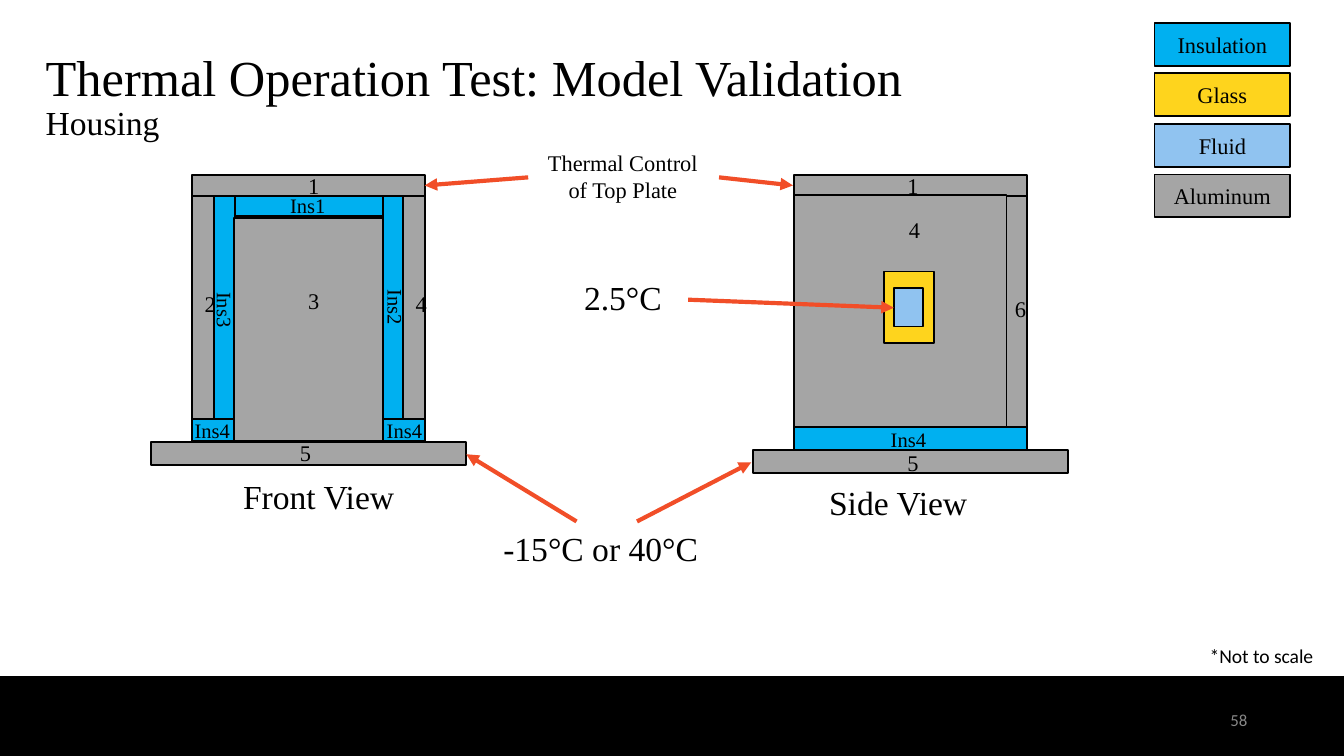
from dataclasses import dataclass

from lxml import etree
from pptx import Presentation
from pptx import util as u
from pptx.dml.color import RGBColor
from pptx.enum import shapes, text
from pptx.oxml import ns


@dataclass(frozen=True)
class Theme:
    ink: str = "000000"
    muted: str = "888888"
    arrow: str = "F14E28"
    insulation: str = "00B0F0"
    glass: str = "FED41D"
    fluid: str = "90C3F0"
    aluminum: str = "A5A5A5"
    serif: str = "Times New Roman"
    sans: str = "Calibri"
    title: float = 27
    large: float = 18
    label: float = 12
    small: float = 11
    note: float = 10.5
    number: float = 9
    outline: float = 1
    arrow_width: float = 2.25


LEFT, CENTER, RIGHT = text.PP_ALIGN.LEFT, text.PP_ALIGN.CENTER, text.PP_ALIGN.RIGHT
MIDDLE, TOP = text.MSO_ANCHOR.MIDDLE, text.MSO_ANCHOR.TOP
COLUMNS, ROWS = 100, 56.25


class Sheet:
    """Draws on one slide; every length is counted in square grid cells."""

    def __init__(self, deck, theme):
        self.theme = theme
        self.cell = deck.slide_width / COLUMNS
        self.slide = deck.slides.add_slide(deck.slide_layouts[5])

    def grid(self, *cells):
        return [u.Emu(round(count * self.cell)) for count in cells]

    def style(self, para, size, font, color, align):
        para.alignment = align
        for span in para.runs:
            span.font.size = u.Pt(size)
            span.font.name = font
            span.font.color.rgb = RGBColor.from_string(color)

    def frame(self, box, margin, anchor):
        frame = box.text_frame
        frame.word_wrap = True
        frame.auto_size = text.MSO_AUTO_SIZE.NONE
        frame.vertical_anchor = anchor
        frame.margin_left = frame.margin_right = u.Inches(0.1)
        frame.margin_top = frame.margin_bottom = u.Inches(margin)
        return frame

    def title(self, heading, subheading, place):
        box = self.slide.shapes.title
        box.left, box.top, box.width, box.height = self.grid(*place)
        para = self.frame(box, 0.1, TOP).paragraphs[0]
        para.text = f"{heading}\v{subheading}"
        para.line_spacing = 0.9
        self.style(para, self.theme.title, self.theme.serif, self.theme.ink, LEFT)
        para.runs[1].font.size = u.Pt(self.theme.large)
        line_break = para._p.find(ns.qn("a:br"))
        etree.SubElement(line_break, ns.qn("a:rPr"), sz=str(self.theme.title * 100))

    def block(self, place, fill, words="", parent=None):
        parent = parent or self.slide
        box = parent.shapes.add_shape(shapes.MSO_SHAPE.RECTANGLE, *self.grid(*place))
        box.shadow.inherit = False
        box.fill.solid()
        box.fill.fore_color.rgb = RGBColor.from_string(fill)
        box.line.color.rgb = RGBColor.from_string(self.theme.ink)
        box.line.width = u.Pt(self.theme.outline)
        if words:
            frame = self.frame(box, 0.05, MIDDLE)
            frame.text = words
            self.style(frame.paragraphs[0], self.theme.label, self.theme.serif,
                       self.theme.ink, CENTER)

    def view(self, parts):
        """Group the blocks of one housing view, back to front."""
        group = self.slide.shapes.add_group_shape()
        for fill, *place in parts:
            self.block(place, fill, parent=group)

    def label(self, words, place, size, align=CENTER, turn=0, font=None, color=None,
              anchor=TOP):
        box = self.slide.shapes.add_textbox(*self.grid(*place))
        box.rotation = turn
        frame = self.frame(box, 0.05, anchor)
        frame.text = words
        self.style(frame.paragraphs[0], size, font or self.theme.serif,
                   color or self.theme.ink, align)

    def arrow(self, *ends):
        line = self.slide.shapes.add_connector(shapes.MSO_CONNECTOR.STRAIGHT,
                                               *self.grid(*ends))
        line.line.color.rgb = RGBColor.from_string(self.theme.arrow)
        line.line.width = u.Pt(self.theme.arrow_width)
        etree.SubElement(line.line._get_or_add_ln(), ns.qn("a:tailEnd"), type="triangle")
        etree.SubElement(line._element.spPr, ns.qn("a:effectLst"))


def draw_views(sheet, theme):
    metal, ins = theme.aluminum, theme.insulation
    wall, plate, base = 1.6, 17.3, 23.4
    front, side, top = 14.3, 59.1, 13
    under = top + wall
    front_right = front + plate
    core, height = 11.1, 16.6
    foot = (plate - core) / 2

    sheet.view([
        (ins, front, 31.2, foot, 1.6),
        (ins, front_right - foot, 31.2, foot, 1.6),
        (ins, front + foot, under, core, 1.5),
        (ins, front + wall, under, wall, height),
        (ins, front_right - foot, under, wall, height),
        (metal, front, under, wall, height),
        (metal, front_right - wall, under, wall, height),
        (metal, front, top, plate, wall),
        (metal, front + foot, 16.2, core, height),
        (metal, front - (base - plate) / 2, 32.9, base, 1.7),
    ])
    sheet.view([
        (metal, side, top, plate, wall),
        (metal, side + plate - wall, under, wall, 17.3),
        (metal, side, 14.5, 15.8, 17.3),
        (ins, side, 31.8, plate, 1.7),
        (metal, side - (base - plate) / 2, 33.5, base, 1.7),
        (theme.glass, 65.8, 20.2, 3.7, 5.3),
        (theme.fluid, 66.5, 21.4, 2.2, 2.9),
    ])


def draw_labels(sheet, theme):
    for words, left, top in (("Front View", 17.1, 34.9), ("Side View", 60.7, 35.4)):
        sheet.label(words, (left, top, 13.9, 4), theme.large, LEFT)

    numbers = [("1", 22, 12.3), ("3", 22, 20.9), ("2", 14.3, 21.1), ("4", 30, 21.1),
               ("5", 21.4, 32.2), ("4", 66.7, 15.6), ("1", 66.6, 12.3),
               ("6", 74.6, 21.5), ("5", 66.6, 32.9)]
    for words, left, top in numbers:
        sheet.label(words, (left, top, 1.9, 3), theme.label)

    layers = [("Ins1", 20.4, 13.9, 0), ("Ins2", 26.9, 21.4, 90), ("Ins3", 14.2, 21.6, 90),
              ("Ins4", 27.6, 30.6, 0), ("Ins4", 13.3, 30.6, 0), ("Ins4", 65.1, 31.3, 0)]
    for words, left, top, turn in layers:
        sheet.label(words, (left, top, 5, 2.9), theme.small, turn=turn)

    sheet.label("-15°C or 40°C", (36.1, 38.8, 17.2, 4), theme.large)
    sheet.label("2.5°C", (41.3, 20.1, 10.1, 4), theme.large)
    sheet.label("Thermal Control of Top Plate", (39.3, 10.6, 14.1, 5), theme.label)
    sheet.label("*Not to scale", (82.5, 47.4, 16.2, 2.9), theme.note, RIGHT,
                font=theme.sans)
    sheet.label("58", (87.8, 51.4, 6, 4.3), theme.number, RIGHT, font=theme.sans,
                color=theme.muted, anchor=MIDDLE)


def main():
    deck = Presentation()
    deck.slide_width = u.Inches(10)
    deck.slide_height = u.Emu(round(deck.slide_width * ROWS / COLUMNS))
    theme = Theme()
    sheet = Sheet(deck, theme)

    footer_top = 50.4
    sheet.block((0, footer_top, COLUMNS, ROWS - footer_top), theme.ink)
    sheet.title("Thermal Operation Test: Model Validation", "Housing",
                (2.4, 2.9, 93.2, 6.3))
    draw_views(sheet, theme)

    legend = [("Insulation", theme.insulation), ("Glass", theme.glass),
              ("Fluid", theme.fluid), ("Aluminum", theme.aluminum)]
    for row, (words, fill) in enumerate(legend):
        sheet.block((85.9, 1.7 + 3.76 * row, 10.1, 3.2), fill, words)

    for ends in ((42.9, 38.8, 34.7, 33.8), (47.4, 38.8, 55.9, 34.4),
                 (51.2, 22.3, 66.5, 22.9), (53.5, 13.2, 59, 13.8),
                 (39.3, 13.2, 31.6, 13.8)):
        sheet.arrow(*ends)
    draw_labels(sheet, theme)
    deck.save("out.pptx")


if __name__ == "__main__":
    main()
